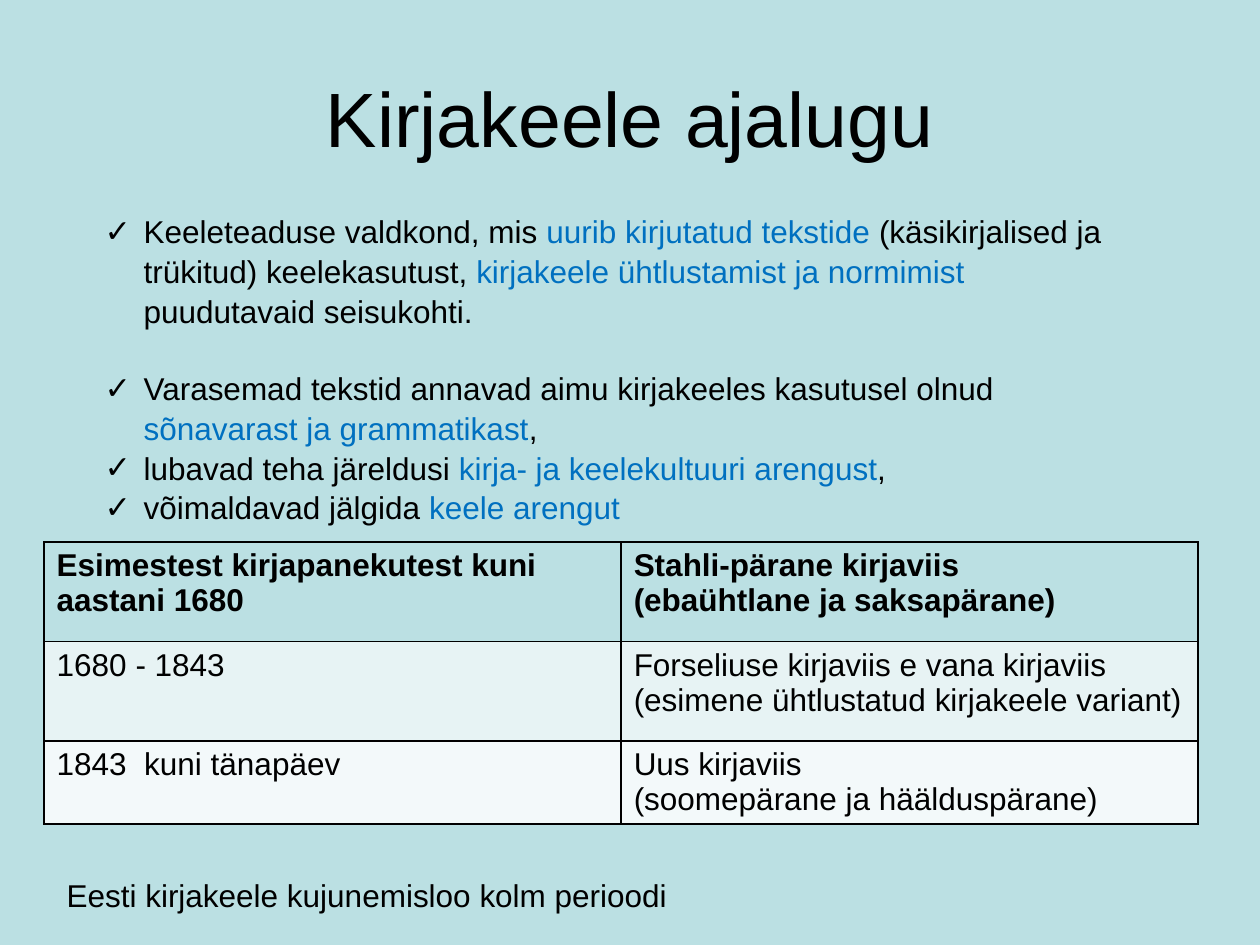
"""Build the slide on the history of the Estonian written language."""
from lxml.etree import SubElement
from pptx import Presentation
from pptx.dml.color import RGBColor
from pptx.enum.text import MSO_ANCHOR, PP_ALIGN
from pptx.oxml.ns import qn
from pptx.util import Inches, Pt

BLACK = RGBColor(0x00, 0x00, 0x00)
BLUE = RGBColor(0x00, 0x70, 0xC0)
BACKGROUND = RGBColor(0xBB, 0xE0, 0xE3)
ROW_FILLS = [BACKGROUND, RGBColor(0xE7, 0xF3, 0xF4), RGBColor(0xF3, 0xF9, 0xFA)]

TITLE = "Kirjakeele ajalugu"
POINTS = [
    (0, [("Keeleteaduse valdkond, mis ", BLACK),
         ("uurib kirjutatud tekstide ", BLUE),
         ("(käsikirjalised ja trükitud) keelekasutust, ", BLACK),
         ("kirjakeele ühtlustamist ja normimist ", BLUE),
         ("puudutavaid seisukohti.", BLACK)]),
    (21.7, [("Varasemad tekstid annavad aimu kirjakeeles kasutusel olnud ", BLACK),
            ("sõnavarast ja grammatikast", BLUE),
            (",", BLACK)]),
    (0, [("lubavad teha järeldusi ", BLACK),
         ("kirja- ja keelekultuuri arengust", BLUE),
         (",", BLACK)]),
    (0, [("võimaldavad jälgida ", BLACK),
         ("keele arengut", BLUE)]),
]
PERIODS = [
    (["Esimestest kirjapanekutest kuni aastani 1680"],
     ["Stahli-pärane kirjaviis", "(ebaühtlane ja saksapärane)"]),
    (["1680 - 1843"],
     ["Forseliuse kirjaviis e vana kirjaviis", "(esimene ühtlustatud kirjakeele variant)"]),
    (["1843  kuni tänapäev"],
     ["Uus kirjaviis", "(soomepärane ja häälduspärane)"]),
]
ROW_HEIGHTS = [0.79, 0.79, 0.66]
CAPTION = "Eesti kirjakeele kujunemisloo kolm perioodi"


def place(shape, left, top, width, height):
    shape.left, shape.top = Inches(left), Inches(top)
    shape.width, shape.height = Inches(width), Inches(height)


def add_span(para, text, color=BLACK, size=18, bold=False):
    span = para.add_run()
    span.text = text
    span.font.name = "Arial"
    span.font.size = Pt(size)
    span.font.bold = bold
    span.font.color.rgb = color


def next_para(frame, index):
    return frame.paragraphs[0] if index == 0 else frame.add_paragraph()


def add_check_bullet(para):
    properties = para._p.get_or_add_pPr()
    properties.set("marL", str(Inches(0.31)))
    properties.set("indent", str(-Inches(0.31)))
    SubElement(properties, qn("a:buFont"), typeface="Arial")
    SubElement(properties, qn("a:buChar"), char="✓")


def add_borders(cell):
    properties = cell._tc.get_or_add_tcPr()
    for position, side in enumerate(("lnL", "lnR", "lnT", "lnB")):
        line = properties.makeelement(qn(f"a:{side}"), {"w": str(Pt(1))})
        fill = SubElement(line, qn("a:solidFill"))
        SubElement(fill, qn("a:srgbClr"), val=str(BLACK))
        properties.insert(position, line)


def add_title(page):
    title = page.shapes.title
    place(title, 0.5, 0.3, 9, 1.25)
    title.text_frame.vertical_anchor = MSO_ANCHOR.MIDDLE
    para = title.text_frame.paragraphs[0]
    para.alignment = PP_ALIGN.CENTER
    add_span(para, TITLE, size=44)


def add_points(page):
    body = page.placeholders[1]
    place(body, 0.73, 1.62, 8.43, 2.52)
    for index, (gap, spans) in enumerate(POINTS):
        para = next_para(body.text_frame, index)
        para.line_spacing = 1.05
        para.space_before = Pt(gap)
        add_check_bullet(para)
        for text, color in spans:
            add_span(para, text, color)


def add_periods(page):
    frame = page.shapes.add_table(len(PERIODS), 2, Inches(0.35), Inches(4.3),
                                  Inches(9.16), Inches(sum(ROW_HEIGHTS)))
    table = frame.table
    for row, (height, fill, columns) in enumerate(zip(ROW_HEIGHTS, ROW_FILLS, PERIODS)):
        table.rows[row].height = Inches(height)
        for column, lines in enumerate(columns):
            cell = table.cell(row, column)
            cell.fill.solid()
            cell.fill.fore_color.rgb = fill
            add_borders(cell)
            for index, text in enumerate(lines):
                add_span(next_para(cell.text_frame, index), text, bold=row == 0)


def add_caption(page):
    box = page.shapes.add_textbox(Inches(0.43), Inches(6.9), Inches(5.35), Inches(0.4))
    box.text_frame.word_wrap = True
    add_span(box.text_frame.paragraphs[0], CAPTION)


def main():
    deck = Presentation()
    deck.slide_width, deck.slide_height = Inches(10), Inches(7.5)
    page = deck.slides.add_slide(deck.slide_layouts[1])
    page.background.fill.solid()
    page.background.fill.fore_color.rgb = BACKGROUND
    add_title(page)
    add_periods(page)
    add_points(page)
    add_caption(page)
    deck.save("out.pptx")


if __name__ == "__main__":
    main()
